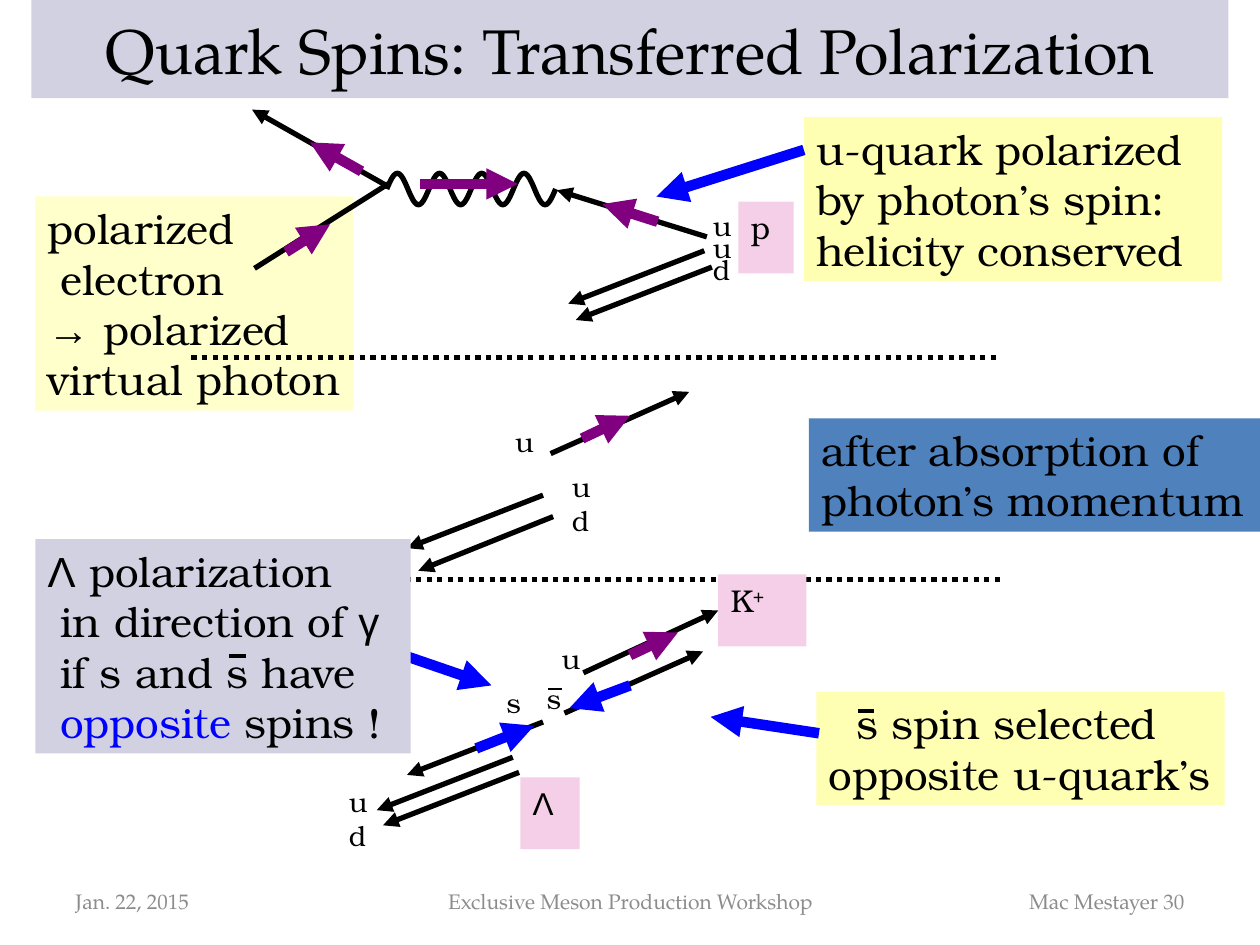
from dataclasses import dataclass
from math import pi, sin
from typing import Optional

from lxml.etree import SubElement
from pptx import Presentation
from pptx.dml.color import RGBColor
from pptx.enum.dml import MSO_LINE
from pptx.enum.shapes import MSO_CONNECTOR, MSO_SHAPE
from pptx.enum.text import MSO_ANCHOR as Anchor, PP_ALIGN as Align
from pptx.oxml.ns import qn
from pptx.util import Cm, Pt


@dataclass(frozen=True)
class Theme:
    black: str = "000000"
    grey: str = "8C8C8C"
    purple: str = "800080"
    blue: str = "0000FF"
    lavender: str = "D2D1E1"
    cream: str = "FFFFCC"
    yellow: str = "FFFFB3"
    pink: str = "F5CFE7"
    steel: str = "4F81BD"
    body: str = "TeX Gyre Bonum"
    heading: str = "TeX Gyre Pagella"
    symbol: str = "Arial"
    title_pt: int = 36
    note_pt: int = 24
    particle_pt: int = 18
    quark_pt: int = 16
    footer_pt: int = 12
    line_pt: float = 3
    spin_pt: float = 6


T = Theme()


@dataclass(frozen=True)
class Run:
    text: str
    font: Optional[str] = None
    color: Optional[str] = None
    raised: bool = False


@dataclass(frozen=True)
class Line:
    runs: tuple
    indent: float = 0


@dataclass(frozen=True)
class Box:
    x: float
    y: float
    w: float
    h: float
    lines: tuple
    size: int
    fill: Optional[str] = None
    font: str = T.body
    color: str = T.black
    align: Align = Align.LEFT
    anchor: Anchor = Anchor.TOP
    spacing: Optional[float] = None


@dataclass(frozen=True)
class Stroke:
    x1: float
    y1: float
    x2: float
    y2: float
    color: str = T.black
    width: float = T.line_pt
    arrow: bool = True
    dotted: bool = False


def u(value: float) -> Cm:
    """Convert the slide's grid unit (a tenth of its width) to a length."""
    return Cm(2.54 * value)


def line(*runs, indent: float = 0) -> Line:
    return Line(tuple(Run(r) if isinstance(r, str) else r for r in runs), indent)


def draw_box(slide, box: Box):
    place = [u(v) for v in (box.x, box.y, box.w, box.h)]
    if box.fill:
        s = slide.shapes.add_shape(MSO_SHAPE.RECTANGLE, *place)
        s.shadow.inherit = False
        s.fill.solid()
        s.fill.fore_color.rgb = RGBColor.from_string(box.fill)
        s.line.fill.background()
    else:
        s = slide.shapes.add_textbox(*place)
    tf = s.text_frame
    tf.word_wrap = True
    tf.vertical_anchor = box.anchor
    if box.align == Align.LEFT:
        tf.margin_right = 0
    for i, item in enumerate(box.lines):
        p = tf.add_paragraph() if i else tf.paragraphs[0]
        p.alignment = box.align
        if box.spacing:
            p.line_spacing = box.spacing
        if item.indent:
            p._p.get_or_add_pPr().set("marL", str(u(item.indent)))
        for part in item.runs:
            r = p.add_run()
            r.text = part.text
            r.font.size = Pt(box.size)
            r.font.name = part.font or box.font
            r.font.color.rgb = RGBColor.from_string(part.color or box.color)
            if part.raised:
                r.font._element.set("baseline", "30000")
    return s


def draw_stroke(slide, k: Stroke):
    ends = [u(v) for v in (k.x1, k.y1, k.x2, k.y2)]
    c = slide.shapes.add_connector(MSO_CONNECTOR.STRAIGHT, *ends)
    c.line.color.rgb = RGBColor.from_string(k.color)
    c.line.width = Pt(k.width)
    if k.dotted:
        c.line.dash_style = MSO_LINE.ROUND_DOT
    if k.arrow:
        SubElement(c.line._get_or_add_ln(), qn("a:tailEnd"), type="triangle")
    SubElement(c._element.spPr, qn("a:effectLst"))
    return c


def draw_photon(slide, x: float, y: float, length: float, height: float, waves: int = 4) -> None:
    steps = 24 * waves
    points = [(u(x + length * i / steps), u(y - height * sin(2 * pi * waves * i / steps)))
              for i in range(steps + 1)]
    builder = slide.shapes.build_freeform(*points[0])
    builder.add_line_segments(points[1:], close=False)
    s = builder.convert_to_shape()
    s.shadow.inherit = False
    s.fill.background()
    s.line.color.rgb = RGBColor.from_string(T.black)
    s.line.width = Pt(T.line_pt)


def footer(x: float, w: float, text: str, align: Align) -> Box:
    return Box(x, 6.95, w, 0.4, (line(text),), T.footer_pt, None, T.heading, T.grey, align, Anchor.MIDDLE)


def quarks(x: float, y: float, names: str, spacing: Optional[float] = None) -> Box:
    return Box(x, y, 0.42, 0.37 + 0.27 * (len(names) - 1), tuple(line(n) for n in names),
               T.quark_pt, spacing=spacing)


def spin(x1: float, y1: float, x2: float, y2: float, color: str = T.purple) -> Stroke:
    return Stroke(x1, y1, x2, y2, color, T.spin_pt)


def bar(x: float, y: float, w: float, width: float) -> Stroke:
    """Overline that turns an s into an antiquark."""
    return Stroke(x, y, x + w, y, width=width, arrow=False)


BACK_BOXES = [
    footer(0.5, 2.33, "Jan. 22, 2015", Align.LEFT),
    footer(3.42, 3.17, "Exclusive Meson Production Workshop", Align.CENTER),
    footer(7.17, 2.33, "Mac Mestayer 30", Align.RIGHT),
    Box(0.28, 1.56, 2.52, 1.7, (line("polarized"), line("electron", indent=0.1),
        line(Run("→", T.symbol), " polarized"), line("virtual photon")), T.note_pt, T.cream),
    Box(0.25, 0, 9.5, 0.78, (line("Quark Spins: Transferred Polarization"),), T.title_pt,
        T.lavender, T.heading, align=Align.CENTER, anchor=Anchor.MIDDLE),
]
DIQUARK_TAILS = [(5.59, 1.99), (5.65, 2.12), (4.31, 3.93), (4.31, 5.73), (4.07, 6.01), (4.12, 6.13)]
RISING_TAILS = [(4.37, 3.6), (4.48, 5.66)]
PATHS = [Stroke(x, y, x - 1.08, y + 0.42) for x, y in DIQUARK_TAILS]
PATHS += [Stroke(x, y, x + 1.1, y - 0.49) for x, y in RISING_TAILS]
PATHS += [Stroke(5.61, 1.88, 4.42, 1.51)]
PATHS += [Stroke(x, y, x + 6.42, y, arrow=False, dotted=True) for x, y in [(1.52, 2.84), (1.55, 4.6)]]
KAON = Box(5.7, 4.56, 0.7, 0.57, (line("K", Run("+", raised=True)),), T.particle_pt, T.pink)
FRONT_BOXES = [
    quarks(5.56, 1.69, "uud", 0.65), quarks(3.99, 3.32, "u"), quarks(4.44, 3.68, "ud"),
    quarks(4.36, 5.04, "u"), quarks(4.24, 5.36, "s"), quarks(3.92, 5.39, "s"), quarks(2.67, 6.18, "ud"),
    Box(5.86, 1.6, 0.44, 0.57, (line("p"),), T.particle_pt, T.pink),
    Box(4.13, 6.17, 0.47, 0.57, (line(Run("Λ", T.symbol)),), T.particle_pt, T.pink),
    Box(6.38, 0.93, 3.32, 1.3, (line("u-quark polarized"), line("by photon’s spin:"),
        line("helicity conserved")), T.note_pt, T.yellow),
    Box(6.42, 3.32, 3.58, 0.9, (line("after absorption of"), line("photon’s momentum")),
        T.note_pt, T.steel),
    Box(6.48, 5.49, 3.24, 0.9, (line("s spin selected", indent=0.22), line("opposite u-quark’s")),
        T.note_pt, T.yellow),
]
FRONT_STROKES = [
    Stroke(2.02, 2.13, 3.08, 1.46, arrow=False), Stroke(3.08, 1.48, 2, 0.87),
    Stroke(4.39, 4.1, 3.32, 4.53),
    spin(2.27, 2, 2.62, 1.78), spin(2.87, 1.36, 2.46, 1.13), spin(3.33, 1.46, 4.11, 1.46),
    spin(5.22, 1.76, 4.78, 1.62), spin(4.62, 3.48, 5, 3.3), spin(5, 5.2, 5.38, 5.02),
    spin(5, 5.44, 4.52, 5.62, T.blue), spin(3.78, 5.94, 4.24, 5.76, T.blue),
    spin(6.5, 5.82, 5.64, 5.69, T.blue), spin(6.38, 1.19, 5.21, 1.56, T.blue),
    spin(3.23, 5.21, 3.9, 5.44, T.blue),
    bar(4.35, 5.47, 0.11, 1.5), bar(6.81, 5.64, 0.13, 2.25),
]
LAMBDA_NOTE = Box(0.28, 4.28, 2.98, 1.7, (
    line(Run("Λ", T.symbol), " polarization"),
    line("in direction of ", Run("γ", T.symbol), indent=0.1),
    line("if s and s have", indent=0.1),
    line(Run("opposite", color=T.blue), " spins !", indent=0.1)), T.note_pt, T.lavender)


def main() -> None:
    prs = Presentation()
    prs.slide_width, prs.slide_height = u(10), u(7.5)
    slide = prs.slides.add_slide(prs.slide_layouts[6])
    for box in BACK_BOXES:
        draw_box(slide, box)
    for path in PATHS:
        draw_stroke(slide, path)
    draw_photon(slide, 3.07, 1.5, 1.34, 0.125)
    kaon_path = draw_stroke(slide, Stroke(4.63, 5.34, 5.7, 4.85))
    kaon_path.end_connect(draw_box(slide, KAON), 1)
    for box in FRONT_BOXES:
        draw_box(slide, box)
    for stroke in FRONT_STROKES:
        draw_stroke(slide, stroke)
    draw_box(slide, LAMBDA_NOTE)
    draw_stroke(slide, bar(1.82, 5.21, 0.13, 2.25))
    prs.save("out.pptx")


if __name__ == "__main__":
    main()
